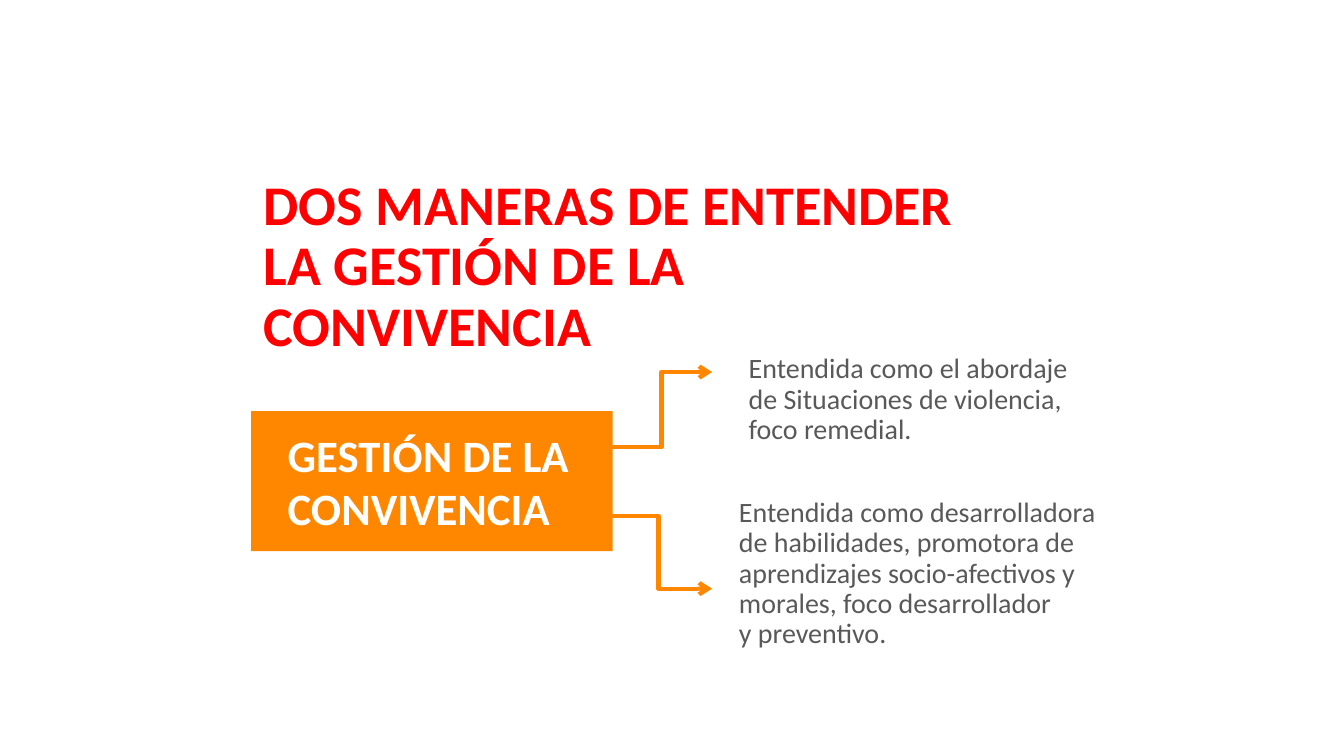
"""Builds a slide on two ways of understanding the management of coexistence."""
import dataclasses

import lxml.etree
import pptx
import pptx.dml.color
import pptx.enum.shapes
import pptx.enum.text
import pptx.oxml.ns
import pptx.util

Pt = pptx.util.Pt
qn = pptx.oxml.ns.qn
ANCHOR = pptx.enum.text.MSO_ANCHOR


@dataclasses.dataclass(frozen=True)
class Theme:
    """Font, colours and type sizes of the slide."""
    font: str = "Calibri"
    title: str = "FF0000"
    accent: str = "FF8700"
    light: str = "FFFFFF"
    body: str = "595959"
    title_size: float = 30
    box_size: float = 24
    body_size: float = 15


THEME = Theme()


def rgb(color):
    """Return a colour object for a hex string."""
    return pptx.dml.color.RGBColor.from_string(color)


def write(sp, text, size, color, bold=False, spacing=0.9,
          anchor=ANCHOR.TOP, margins=(7.2, 3.6, 7.2, 3.6)):
    """Write left-aligned, wrapped text into a shape."""
    tf = sp.text_frame
    tf.word_wrap = True
    tf.auto_size = pptx.enum.text.MSO_AUTO_SIZE.NONE
    tf.vertical_anchor = anchor
    tf.margin_left, tf.margin_top, tf.margin_right, tf.margin_bottom = map(Pt, margins)
    p = tf.paragraphs[0]
    p.text = text
    p.alignment = pptx.enum.text.PP_ALIGN.LEFT
    p.line_spacing = spacing
    for r in p.runs:
        r.font.name = THEME.font
        r.font.size = Pt(size)
        r.font.bold = bold
        r.font.color.rgb = rgb(color)


def add_title(s, text, x, y, w, h):
    """Place and fill the title placeholder."""
    sp = s.shapes.title
    sp.left, sp.top, sp.width, sp.height = map(Pt, (x, y, w, h))
    write(sp, text, THEME.title_size, THEME.title, bold=True, anchor=ANCHOR.MIDDLE)


def add_box(s, text, x, y, w, h):
    """Add the filled box that holds the main concept."""
    sp = s.shapes.add_shape(pptx.enum.shapes.MSO_SHAPE.RECTANGLE, *map(Pt, (x, y, w, h)))
    sp.shadow.inherit = False
    sp.fill.solid()
    sp.fill.fore_color.rgb = rgb(THEME.accent)
    sp.line.fill.background()
    write(sp, text, THEME.box_size, THEME.light, bold=True, spacing=1,
          anchor=ANCHOR.MIDDLE, margins=(19.5, 8.6, 4.3, 8.6))


def add_note(s, text, x, y, w, h):
    """Add a text box describing one approach."""
    sp = s.shapes.add_textbox(*map(Pt, (x, y, w, h)))
    write(sp, text, THEME.body_size, THEME.body)


def add_arrow(s, start, end, bend):
    """Add an elbow arrow that turns at a fraction of its width."""
    sp = s.shapes.add_connector(pptx.enum.shapes.MSO_CONNECTOR.ELBOW,
                                *map(Pt, (*start, *end)))
    sp.line.color.rgb = rgb(THEME.accent)
    sp.line.width = Pt(2.25)
    lxml.etree.SubElement(sp.line._get_or_add_ln(), qn("a:tailEnd"), type="arrow")
    props = sp._element.spPr
    lxml.etree.SubElement(props, qn("a:effectLst"))
    guides = props.find(qn("a:prstGeom")).get_or_add_avLst()
    lxml.etree.SubElement(guides, qn("a:gd"), name="adj1",
                          fmla=f"val {round(bend * 100000)}")


def main():
    """Build and save the slide."""
    prs = pptx.Presentation()
    prs.slide_width, prs.slide_height = Pt(720), Pt(405)
    s = prs.slides.add_slide(prs.slide_layouts[5])
    add_title(s, "DOS MANERAS DE ENTENDER LA GESTIÓN DE LA CONVIVENCIA",
              134, 117.4, 414.7, 51.8)
    add_box(s, "GESTIÓN DE LA CONVIVENCIA", 134.6, 220.3, 193.7, 75)
    add_note(s, "Entendida como el abordaje de Situaciones de violencia, foco remedial.",
             394, 186.5, 190.8, 56.2)
    add_note(s, "Entendida como desarrolladora de habilidades, promotora de aprendizajes "
                "socio-afectivos y morales, foco desarrollador\vy preventivo.",
             388.8, 263.5, 209.5, 89.3)
    add_arrow(s, (304, 276.5), (381.5, 315.4), 0.63)
    add_arrow(s, (304, 239.7), (381.5, 199.4), 0.65)
    prs.save("out.pptx")


if __name__ == "__main__":
    main()
